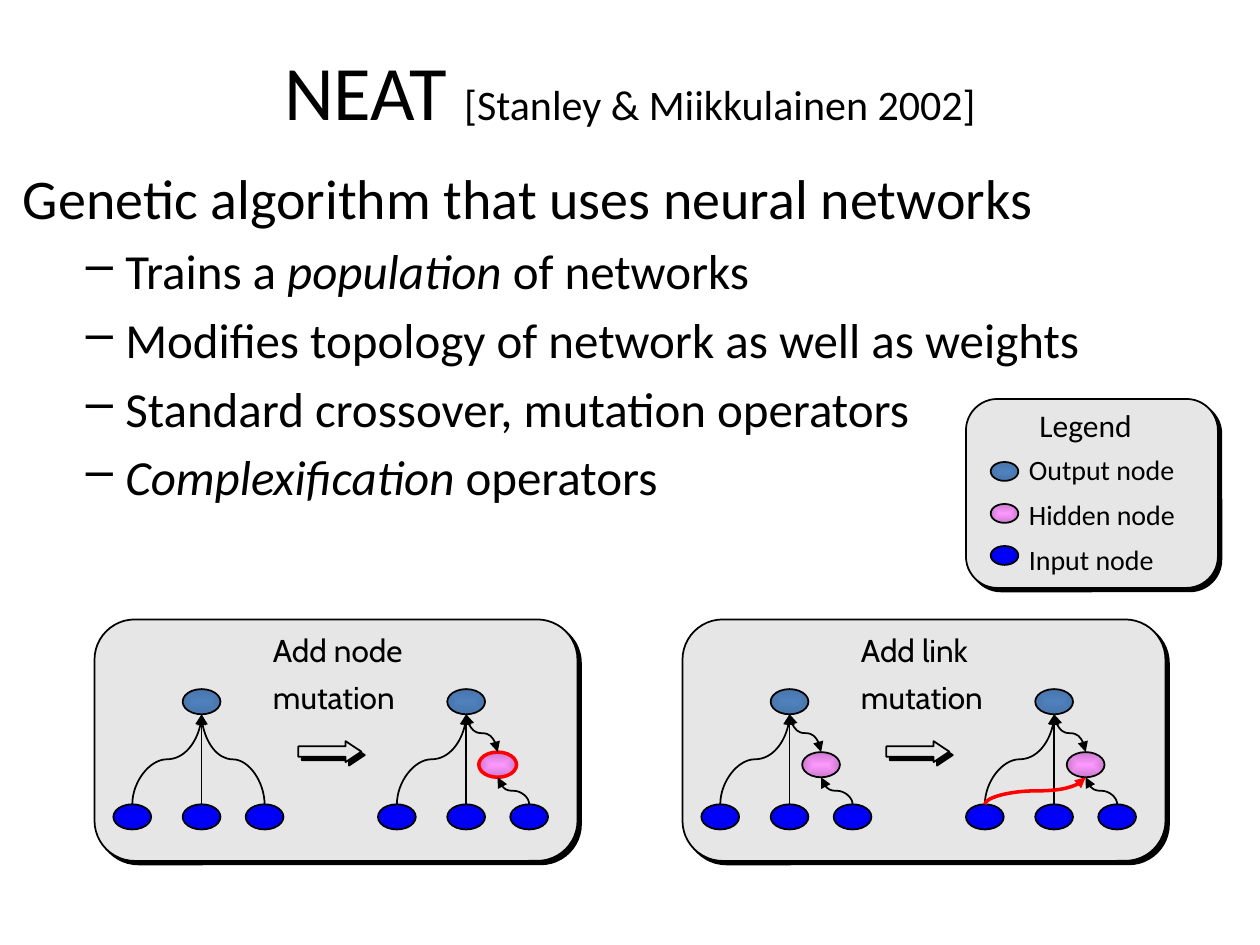
from pptx import Presentation
from pptx.dml.color import RGBColor
from pptx.enum.shapes import MSO_CONNECTOR, MSO_SHAPE
from pptx.enum.text import MSO_ANCHOR, MSO_AUTO_SIZE, PP_ALIGN
from pptx.oxml.ns import qn
from pptx.util import Pt
from lxml.etree import SubElement

BLACK = RGBColor(0x00, 0x00, 0x00)
RED = RGBColor(0xFF, 0x00, 0x00)
PANEL_GRAY = RGBColor(0xE6, 0xE6, 0xE6)
# Node gradients: centre colour, edge colour
OUTPUT_BLUE = (RGBColor(0x4F, 0x81, 0xBD), RGBColor(0x48, 0x75, 0xAC))
HIDDEN_PINK = (RGBColor(0xFE, 0x98, 0xFF), RGBColor(0xCC, 0x7A, 0xCD))
INPUT_BLUE = (RGBColor(0x00, 0x00, 0xFF), RGBColor(0x00, 0x00, 0xE8))

# Network layout: heights of node centres, offsets from the output node
NODE_WIDTH, NODE_HEIGHT = 21.6, 14.4
OUTPUT_Y, HIDDEN_Y, INPUT_Y = 401, 437, 466.8
OUTPUT_BOTTOM = OUTPUT_Y + NODE_HEIGHT / 2
HIDDEN_TOP, HIDDEN_BOTTOM = HIDDEN_Y - NODE_HEIGHT / 2, HIDDEN_Y + NODE_HEIGHT / 2
INPUT_TOP = INPUT_Y - NODE_HEIGHT / 2
LEFT_INPUT, RIGHT_INPUT, HIDDEN = -39.6, 36, 18
PANEL_TOP, PANEL_WIDTH, PANEL_HEIGHT = 354, 276, 138
BEFORE, AFTER = 61.2, 212.4


class SlideBuilder:
    def __init__(self, slide, font="Calibri", color=BLACK):
        self.slide = slide
        self.font = font
        self.color = color

    def shape(self, kind, left, top, width, height, line=BLACK, weight=1):
        shape = self.slide.shapes.add_shape(
            kind, Pt(left), Pt(top), Pt(width), Pt(height))
        shape.shadow.inherit = False
        shape.line.color.rgb = line
        shape.line.width = Pt(weight)
        return shape

    def raised(self, kind, left, top, width, height):
        """Gray shape with a hard black shadow to the lower right."""
        shape = self.shape(kind, left, top, width, height)
        shape.fill.solid()
        shape.fill.fore_color.rgb = PANEL_GRAY
        effects = shape._element.spPr.find(qn("a:effectLst"))
        shadow = SubElement(effects, qn("a:outerShdw"), dist=str(Pt(2.83)),
                            dir="2700000", algn="ctr", rotWithShape="0")
        SubElement(shadow, qn("a:srgbClr"), val=str(BLACK))
        return shape

    def node(self, x, y, colors, width=NODE_WIDTH, height=NODE_HEIGHT,
             line=BLACK, weight=1):
        shape = self.shape(MSO_SHAPE.OVAL, x - width / 2, y - height / 2,
                           width, height, line, weight)
        shape.fill.gradient()
        for stop, color in zip(shape.fill.gradient_stops, colors):
            stop.color.rgb = color
        # Turn the linear gradient into one that follows the shape
        gradient = shape._element.spPr.find(qn("a:gradFill"))
        gradient.remove(gradient.find(qn("a:lin")))
        shading = SubElement(gradient, qn("a:path"), {"path": "shape"})
        SubElement(shading, qn("a:fillToRect"),
                   {side: "50000" for side in "ltrb"})

    def link(self, start, end, head=False, tail=False, line=BLACK, weight=1):
        """Straight when vertical, otherwise a curve leaving vertically."""
        (x1, y1), (x2, y2) = start, end
        if x1 == x2:
            connector = self.slide.shapes.add_connector(
                MSO_CONNECTOR.STRAIGHT, Pt(x1), Pt(y1), Pt(x2), Pt(y2))
        else:
            # The curve is laid out sideways, then turned about its centre
            x, y = (x1 + x2) / 2, (y1 + y2) / 2
            across, rise = abs(y2 - y1) / 2, abs(x2 - x1) / 2
            down = y2 > y1
            if (x2 > x1) == down:
                rise = -rise
            connector = self.slide.shapes.add_connector(
                MSO_CONNECTOR.CURVE, Pt(x - across), Pt(y - rise),
                Pt(x + across), Pt(y + rise))
            transform = connector._element.spPr.find(qn("a:xfrm"))
            transform.set("rot", str((90 if down else 270) * 60000))
        connector.line.color.rgb = line
        connector.line.width = Pt(weight)
        outline = connector.line._get_or_add_ln()
        for wanted, tag in ((head, "a:headEnd"), (tail, "a:tailEnd")):
            if wanted:
                SubElement(outline, qn(tag), type="triangle")
        SubElement(connector._element.spPr, qn("a:effectLst"))

    def text_box(self, left, top, width, height, anchor=MSO_ANCHOR.MIDDLE,
                 inset=True, wrap=True):
        box = self.slide.shapes.add_textbox(
            Pt(left), Pt(top), Pt(width), Pt(height))
        frame = box.text_frame
        frame.word_wrap = wrap
        frame.vertical_anchor = anchor
        if not wrap:
            frame.auto_size = MSO_AUTO_SIZE.SHAPE_TO_FIT_TEXT
        if not inset:
            frame.margin_left = frame.margin_right = 0
            frame.margin_top = frame.margin_bottom = 0
        return frame

    def paragraph(self, frame, runs, before=0, font=None):
        """Each run is (text, size, italic)."""
        paragraph = frame.paragraphs[0]
        if paragraph.runs:
            paragraph = frame.add_paragraph()
        paragraph.space_before = Pt(before)
        for text, size, italic in runs:
            run = paragraph.add_run()
            run.text = text
            run.font.name = font or self.font
            run.font.size = Pt(size)
            run.font.italic = italic
            run.font.color.rgb = self.color
        return paragraph

    def bullet(self, paragraph, margin, indent, character=None):
        properties = paragraph._p.get_or_add_pPr()
        properties.set("marL", str(Pt(margin)))
        properties.set("indent", str(Pt(indent)))
        if character:
            SubElement(properties, qn("a:buChar"), char=character)

    def network(self, x, hidden=True, hidden_line=BLACK, hidden_weight=1):
        output = (x, OUTPUT_BOTTOM)
        self.node(x, OUTPUT_Y, OUTPUT_BLUE)
        for offset in (LEFT_INPUT, 0, RIGHT_INPUT):
            self.node(x + offset, INPUT_Y, INPUT_BLUE)
            if offset != RIGHT_INPUT or not hidden:
                self.link(output, (x + offset, INPUT_TOP), head=True)
        if hidden:
            self.node(x + HIDDEN, HIDDEN_Y, HIDDEN_PINK,
                      line=hidden_line, weight=hidden_weight)
            self.link((x + RIGHT_INPUT, INPUT_TOP),
                      (x + HIDDEN, HIDDEN_BOTTOM), tail=True)
            self.link((x + HIDDEN, HIDDEN_TOP), output, head=True, tail=True)

    def mutation_panel(self, left, title):
        self.raised(MSO_SHAPE.ROUNDED_RECTANGLE, left, PANEL_TOP,
                    PANEL_WIDTH, PANEL_HEIGHT)
        arrow = self.raised(MSO_SHAPE.RIGHT_ARROW, left + 116.5, 423.5, 36, 12)
        arrow.adjustments[1] = 0.75
        frame = self.text_box(left + 102, 364.3, 75, 41, inset=False, wrap=False)
        self.paragraph(frame, [(title, 18, False)], font="Cabin")
        self.paragraph(frame, [("mutation", 18, False)], 5.4, "Cabin")


def main():
    presentation = Presentation()
    presentation.slide_width, presentation.slide_height = Pt(720), Pt(540)
    slide = presentation.slides.add_slide(presentation.slide_layouts[6])
    builder = SlideBuilder(slide)

    # Legend
    builder.raised(MSO_SHAPE.ROUNDED_RECTANGLE, 552, 228, 144, 108)
    frame = builder.text_box(594, 234, 60.5, 17.3, inset=False, wrap=False)
    builder.paragraph(frame, [("Legend", 18, False)])
    frame = builder.text_box(588, 264, 102, 60, inset=False)
    legend = (("Output node", OUTPUT_BLUE), ("Hidden node", HIDDEN_PINK),
              ("Input node", INPUT_BLUE))
    for row, (label, colors) in enumerate(legend):
        builder.node(574, 269.4 + 24 * row, colors, 15.8, 10.8)
        builder.paragraph(frame, [(label, 16, False)], 6.4)

    # Add node mutation
    node_panel, link_panel = 54, 390
    builder.mutation_panel(node_panel, "Add node")
    builder.network(node_panel + BEFORE, hidden=False)
    builder.network(node_panel + AFTER, hidden_line=RED, hidden_weight=2)

    # Add link mutation
    builder.mutation_panel(link_panel, "Add link")
    for offset in (BEFORE, AFTER):
        builder.network(link_panel + offset)
    output_x = link_panel + AFTER
    builder.link((output_x + LEFT_INPUT, INPUT_TOP),
                 (output_x + HIDDEN, HIDDEN_BOTTOM),
                 tail=True, line=RED, weight=2)

    # Title
    frame = builder.text_box(54, 6, 612, 90)
    title = builder.paragraph(frame, [
        ("NEAT ", 44, False), ("[Stanley & Miikkulainen 2002]", 24, False)])
    title.alignment = PP_ALIGN.CENTER

    # Body
    frame = builder.text_box(6, 90, 660, 324, MSO_ANCHOR.TOP)
    heading = builder.paragraph(
        frame, [("Genetic algorithm that uses neural networks", 32, False)], 6.4)
    builder.bullet(heading, 27, -27)
    points = (
        [("Trains a ", 28, False), ("population ", 28, True),
         ("of networks", 28, False)],
        [("Modifies topology of network as well as weights", 28, False)],
        [("Standard crossover, mutation operators", 28, False)],
        [("Complexification ", 28, True), ("operators", 28, False)],
    )
    for runs in points:
        builder.bullet(builder.paragraph(frame, runs, 5.6), 58.5, -22.5, "–")

    presentation.save("out.pptx")


if __name__ == "__main__":
    main()
